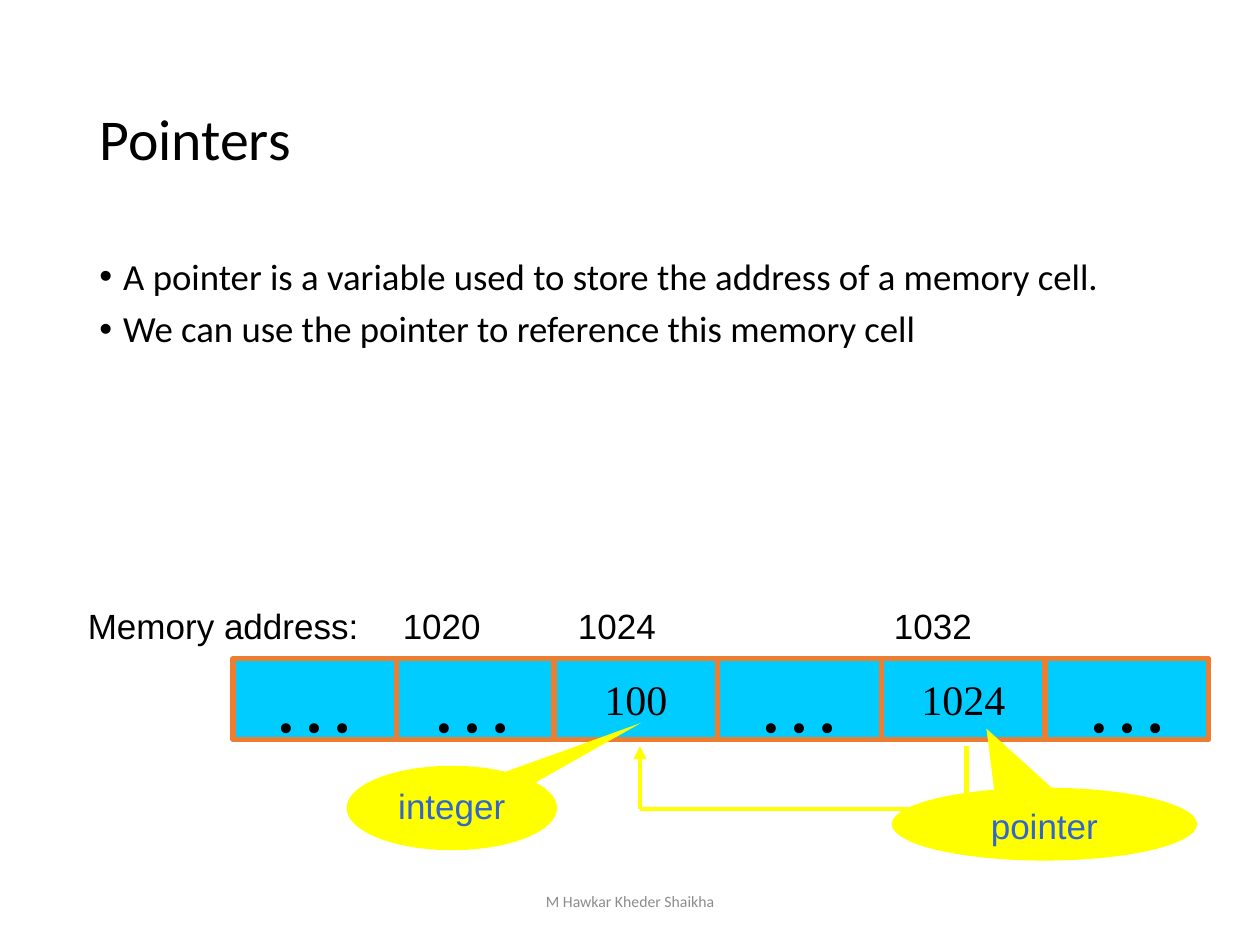
from dataclasses import dataclass
from typing import Optional

from lxml import etree
from pptx import Presentation
from pptx.dml.color import RGBColor
from pptx.enum import shapes, text
from pptx.oxml.ns import qn
from pptx.util import Cm, Pt


@dataclass(frozen=True)
class Theme:
    ink: str = "000000"
    muted: str = "8C8C8C"
    cell_fill: str = "00CCFF"
    cell_border: str = "ED7D31"
    highlight: str = "FFFF00"
    callout_ink: str = "3366CC"
    heading_font: str = "Calibri"
    label_font: str = "Arial"
    value_font: str = "Times New Roman"
    title_size: float = 33
    body_size: float = 21
    label_size: float = 20
    value_size: float = 24
    ellipsis_size: float = 48
    footer_size: float = 9


@dataclass(frozen=True)
class Cell:
    left: float
    value: str = "…"
    address: str = ""
    address_shift: float = 0


@dataclass(frozen=True)
class Callout:
    label: str
    left: float
    top: float
    width: float
    height: float
    tip_x: float
    tip_y: float


THEME = Theme()
CELL_WIDTH, CELL_HEIGHT, CELL_TOP = 3.3, 1.63, 13.28
ADDRESS_TOP, ADDRESS_HEIGHT, ADDRESS_WIDTH = 12.07, 1.09, 2.7
ROW_LEFT = 7.87
LINK_LEFT, LINK_RIGHT, LINK_TOP, LINK_BOTTOM = 12.9, 19.48, 15.04, 16.31

# The leading cell overlaps the row slightly, so it comes last.
CELLS = [
    Cell(ROW_LEFT, address="1020"),
    Cell(ROW_LEFT + CELL_WIDTH, "100", "1024", 0.23),
    Cell(ROW_LEFT + 2 * CELL_WIDTH),
    Cell(ROW_LEFT + 3 * CELL_WIDTH, "1024", "1032"),
    Cell(ROW_LEFT + 4 * CELL_WIDTH),
    Cell(4.7),
]
CALLOUTS = [
    Callout("integer", 6.99, 15.44, 4.24, 1.7, 0.9, -1.01),
    Callout("pointer", 17.98, 15.88, 6.15, 1.47, -0.19, -1.31),
]
BULLETS = [
    "A pointer is a variable used to store the address of a memory cell.",
    "We can use the pointer to reference this memory cell",
]


def place(shape, left: float, top: float, width: float, height: float) -> None:
    shape.left, shape.top = Cm(left), Cm(top)
    shape.width, shape.height = Cm(width), Cm(height)


def write(shape, *lines: str, size: float, font: str, color: str = THEME.ink,
          align=text.PP_ALIGN.LEFT, anchor=text.MSO_ANCHOR.TOP, wrap: bool = True,
          line_spacing: Optional[float] = None, space_between: float = 0,
          bullet: Optional[str] = None) -> None:
    frame = shape.text_frame
    frame.text = "\n".join(lines)
    frame.auto_size = text.MSO_AUTO_SIZE.NONE
    frame.word_wrap, frame.vertical_anchor = wrap, anchor
    for position, paragraph in enumerate(frame.paragraphs):
        if bullet:
            add_bullet(paragraph, bullet)
        paragraph.alignment = align
        paragraph.line_spacing = line_spacing
        paragraph.space_before = Pt(space_between if position else 0)
        paragraph.font.size, paragraph.font.name = Pt(size), font
        paragraph.font.color.rgb = RGBColor.from_string(color)


def add_bullet(paragraph, character: str) -> None:
    properties = paragraph._p.get_or_add_pPr()
    properties.set("marL", str(Cm(0.48)))
    properties.set("indent", str(-Cm(0.48)))
    etree.SubElement(properties, qn("a:buFont")).set("typeface", "Arial")
    etree.SubElement(properties, qn("a:buChar")).set("char", character)


def add_label(slide, label: str, left: float, top: float, width: float,
              height: float, **formatting) -> None:
    box = slide.shapes.add_textbox(Cm(left), Cm(top), Cm(width), Cm(height))
    write(box, label, **formatting)


def add_filled(slide, preset, left: float, top: float, width: float,
               height: float, fill: str):
    shape = slide.shapes.add_shape(preset, Cm(left), Cm(top), Cm(width), Cm(height))
    shape.shadow.inherit = False
    shape.fill.solid()
    shape.fill.fore_color.rgb = RGBColor.from_string(fill)
    return shape


def draw_cell(slide, cell: Cell) -> None:
    box = add_filled(slide, shapes.MSO_SHAPE.RECTANGLE, cell.left, CELL_TOP,
                     CELL_WIDTH, CELL_HEIGHT, THEME.cell_fill)
    box.line.color.rgb = RGBColor.from_string(THEME.cell_border)
    box.line.width = Pt(3)
    size = THEME.ellipsis_size if cell.value == "…" else THEME.value_size
    write(box, cell.value, size=size, font=THEME.value_font, wrap=False,
          align=text.PP_ALIGN.CENTER, anchor=text.MSO_ANCHOR.MIDDLE)
    if cell.address:
        add_label(slide, cell.address, cell.left + cell.address_shift, ADDRESS_TOP,
                  ADDRESS_WIDTH, ADDRESS_HEIGHT,
                  size=THEME.label_size, font=THEME.label_font)


def draw_link(slide, x1: float, y1: float, x2: float, y2: float,
              arrow: bool = False) -> None:
    link = slide.shapes.add_connector(shapes.MSO_CONNECTOR.STRAIGHT,
                                      Cm(x1), Cm(y1), Cm(x2), Cm(y2))
    link.line.color.rgb = RGBColor.from_string(THEME.highlight)
    link.line.width = Pt(2.5)
    if arrow:
        outline = link.line._get_or_add_ln()
        etree.SubElement(outline, qn("a:tailEnd")).set("type", "triangle")
    etree.SubElement(link._element.spPr, qn("a:effectLst"))


def draw_callout(slide, callout: Callout) -> None:
    bubble = add_filled(slide, shapes.MSO_SHAPE.OVAL_CALLOUT, callout.left,
                        callout.top, callout.width, callout.height, THEME.highlight)
    bubble.line.fill.background()
    bubble.adjustments[0] = callout.tip_x
    bubble.adjustments[1] = callout.tip_y
    write(bubble, callout.label, size=THEME.label_size, font=THEME.label_font,
          color=THEME.callout_ink, align=text.PP_ALIGN.CENTER)


def main() -> None:
    deck = Presentation()
    deck.slide_width, deck.slide_height = Cm(25.4), Cm(19.05)
    slide = deck.slides.add_slide(deck.slide_layouts[1])

    title, body = slide.shapes.title, slide.placeholders[1]
    place(title, 1.75, 1.02, 21.9, 3.68)
    write(title, "Pointers", size=THEME.title_size, font=THEME.heading_font,
          anchor=text.MSO_ANCHOR.MIDDLE, line_spacing=0.9)
    place(body, 1.75, 5.08, 21.9, 12.09)
    write(body, *BULLETS, size=THEME.body_size, font=THEME.heading_font,
          line_spacing=0.9, space_between=7.5, bullet="•")

    add_label(slide, "Memory address:", 1.52, ADDRESS_TOP, 6.35, ADDRESS_HEIGHT,
              size=THEME.label_size, font=THEME.label_font)
    for cell in CELLS:
        draw_cell(slide, cell)

    draw_link(slide, LINK_LEFT, LINK_BOTTOM, LINK_LEFT, LINK_TOP, arrow=True)
    draw_link(slide, LINK_LEFT, LINK_BOTTOM, LINK_RIGHT, LINK_BOTTOM)
    draw_link(slide, LINK_RIGHT, LINK_TOP, LINK_RIGHT, LINK_BOTTOM)
    for callout in CALLOUTS:
        draw_callout(slide, callout)

    add_label(slide, "M Hawkar Kheder Shaikha", 8.41, 17.65, 8.58, 1.02,
              size=THEME.footer_size, font=THEME.heading_font, color=THEME.muted,
              align=text.PP_ALIGN.CENTER, anchor=text.MSO_ANCHOR.MIDDLE)
    deck.save("out.pptx")


if __name__ == "__main__":
    main()
